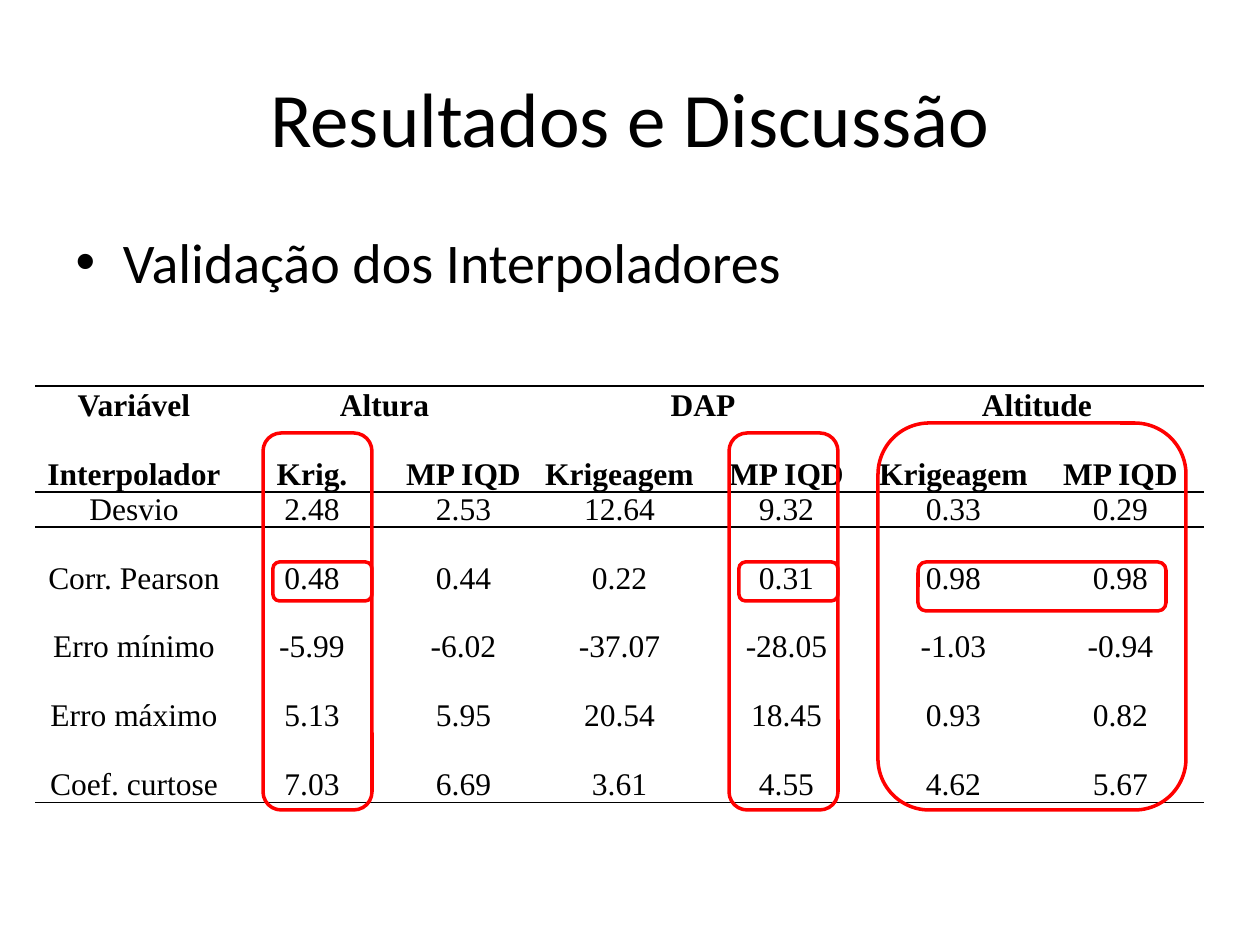
from pptx import Presentation
from pptx.dml.color import RGBColor
from pptx.enum.shapes import MSO_SHAPE
from pptx.enum.text import MSO_ANCHOR, PP_ALIGN
from pptx.oxml import parse_xml
from pptx.oxml.ns import nsdecls, qn
from pptx.util import Pt

PX = 914400 / 126
COLORS = {"text": "000000", "mark": "FF0000"}


def px(*values):
    return [round(v * PX) for v in values]


def set_font(r, **fmt):
    for name, value in fmt.items():
        setattr(r.font, name, value)
    r.font.color.rgb = RGBColor.from_string(COLORS["text"])


prs = Presentation()
prs.slide_width, prs.slide_height = px(1260, 945)
s = prs.slides.add_slide(prs.slide_layouts[1])

placeholders = [
    (s.shapes.title, "Resultados e Discussão", 44, (63, 38, 1134, 157)),
    (s.placeholders[1], "Validação dos Interpoladores", 32, (63, 221, 1134, 624)),
]
for sp, text, size, box in placeholders:
    sp.left, sp.top, sp.width, sp.height = px(*box)
    r = sp.text_frame.paragraphs[0].add_run()
    r.text = text
    set_font(r, name="Calibri", size=Pt(size))

rows = [
    ["Variável", "Altura", "", "DAP", "", "Altitude", ""],
    ["Interpolador", "Krig.", "MP IQD", "Krigeagem", "MP IQD", "Krigeagem", "MP IQD"],
    ["Desvio", "2.48", "2.53", "12.64", "9.32", "0.33", "0.29"],
    ["Corr. Pearson", "0.48", "0.44", "0.22", "0.31", "0.98", "0.98"],
    ["Erro mínimo", "-5.99", "-6.02", "-37.07", "-28.05", "-1.03", "-0.94"],
    ["Erro máximo", "5.13", "5.95", "20.54", "18.45", "0.93", "0.82"],
    ["Coef. curtose", "7.03", "6.69", "3.61", "4.55", "4.62", "5.67"],
]
widths = [198, 158, 145] + [167] * 4
heights = [37, 69, 34] + [69] * 4
borders = {0: "lnT", 1: "lnB", 2: "lnT", 6: "lnB"}

frame = s.shapes.add_table(
    len(rows), len(widths), *px(35, 386, sum(widths), sum(heights))
)
table = frame.table
table.first_row = table.horz_banding = False
style_id = next(frame.element.iter(qn("a:tableStyleId")))
style_id.text = "{2D5ABB26-0587-4C30-8999-92F81FD0307C}"
for col, width in zip(table.columns, px(*widths)):
    col.width = width
for row, height in zip(table.rows, px(*heights)):
    row.height = height
for j in (1, 3, 5):
    table.cell(0, j).merge(table.cell(0, j + 1))

side = px(6)[0]
cell_format = {
    "margin_left": side,
    "margin_right": side,
    "margin_top": 0,
    "margin_bottom": 0,
    "vertical_anchor": MSO_ANCHOR.BOTTOM,
}
for i, row in enumerate(rows):
    for j, text in enumerate(row):
        cell = table.cell(i, j)
        for name, value in cell_format.items():
            setattr(cell, name, value)
        if i in borders:
            cell._tc.get_or_add_tcPr().append(parse_xml(
                f'<a:{borders[i]} {nsdecls("a")} w="{Pt(1)}"><a:solidFill>'
                f'<a:srgbClr val="{COLORS["text"]}"/></a:solidFill></a:{borders[i]}>'
            ))
        cell.fill.background()
        if text:
            p = cell.text_frame.paragraphs[0]
            p.alignment = PP_ALIGN.CENTER
            r = p.add_run()
            r.text = text
            set_font(r, name="Times New Roman", size=Pt(18), bold=i < 2)

marks = [
    (263, 433, 109, 377),
    (729, 433, 109, 377),
    (273, 562, 99, 39),
    (739, 562, 99, 39),
    (878, 423, 308, 387),
    (918, 562, 248, 49),
]
for box in marks:
    sp = s.shapes.add_shape(MSO_SHAPE.ROUNDED_RECTANGLE, *px(*box))
    sp.shadow.inherit = False
    sp.fill.background()
    sp.line.color.rgb = RGBColor.from_string(COLORS["mark"])
    sp.line.width = Pt(2)

prs.save("out.pptx")
